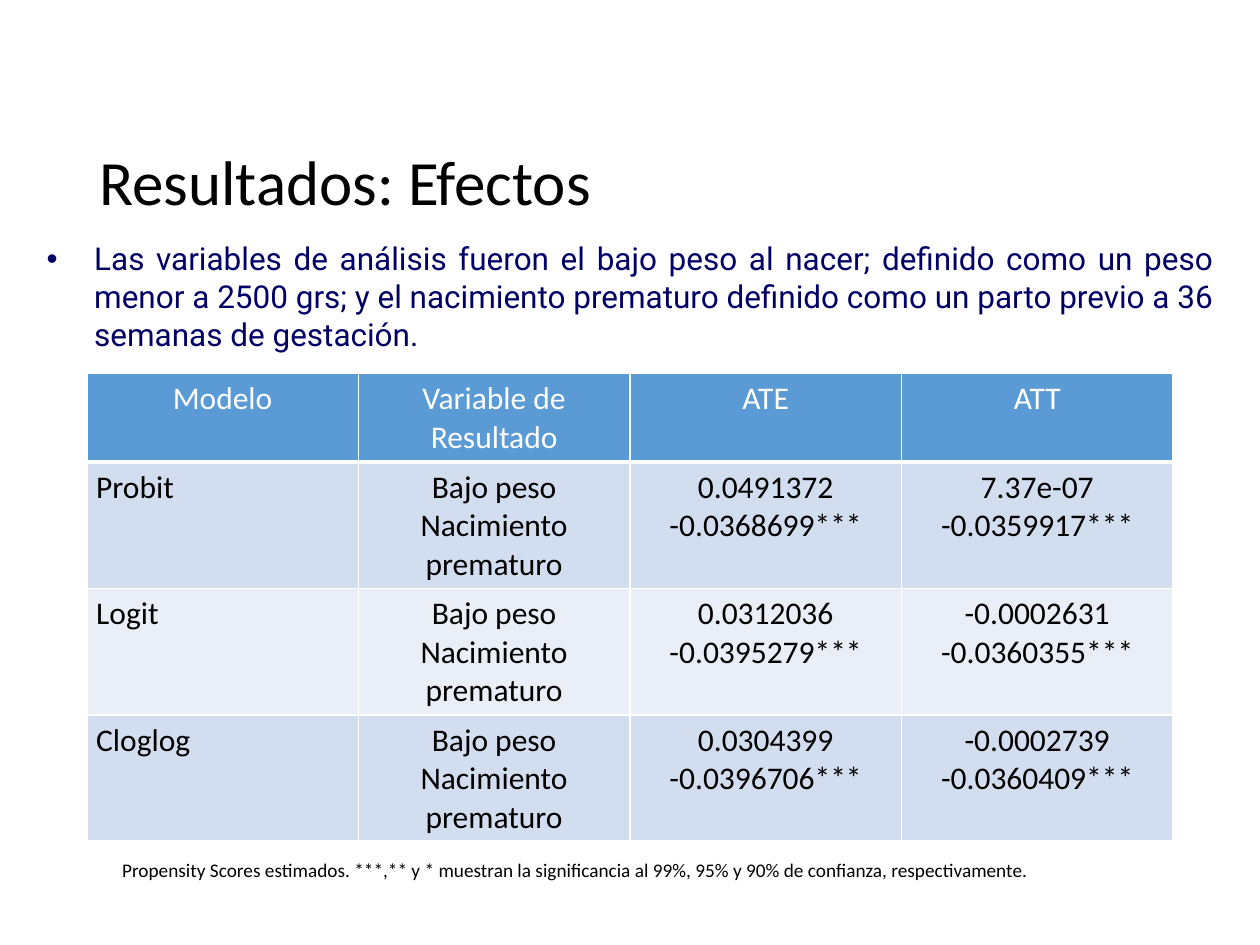
from pptx import Presentation
from pptx.dml.color import RGBColor
from pptx.enum.text import MSO_ANCHOR, PP_ALIGN
from pptx.oxml.ns import qn
from pptx.util import Cm, Pt
from lxml import etree

LEFT, CENTER, JUSTIFY = PP_ALIGN.LEFT, PP_ALIGN.CENTER, PP_ALIGN.JUSTIFY
TOP, MIDDLE = MSO_ANCHOR.TOP, MSO_ANCHOR.MIDDLE
BLACK = RGBColor(0x00, 0x00, 0x00)
WHITE = RGBColor(0xFF, 0xFF, 0xFF)
NAVY = RGBColor(0x00, 0x00, 0x66)
HEADER_BLUE = RGBColor(0x5B, 0x9B, 0xD5)
BAND_DARK = RGBColor(0xD2, 0xDE, 0xEF)
BAND_LIGHT = RGBColor(0xEA, 0xEF, 0xF7)

OUTCOMES = ["Bajo peso", "Nacimiento prematuro"]
HEADINGS = ["Modelo", "Variable de Resultado", "ATE", "ATT"]
EFFECTS = [
    ("Probit", ["0.0491372", "-0.0368699***"], ["7.37e-07", "-0.0359917***"]),
    ("Logit", ["0.0312036", "-0.0395279***"], ["-0.0002631", "-0.0360355***"]),
    ("Cloglog", ["0.0304399", "-0.0396706***"], ["-0.0002739", "-0.0360409***"]),
]


def add_span(para, text, size, color, font="Calibri"):
    span = para.add_run()
    span.text = text
    span.font.name = font
    span.font.size = Pt(size)
    span.font.bold = False
    span.font.color.rgb = color


def add_text(page, place, text, size, color, align, font="Calibri", anchor=TOP):
    box = page.shapes.add_textbox(*[Cm(length) for length in place])
    frame = box.text_frame
    frame.word_wrap = True
    frame.vertical_anchor = anchor
    para = frame.paragraphs[0]
    para.alignment = align
    add_span(para, text, size, color, font)
    return para


def add_bullet(para, indent):
    properties = para._p.get_or_add_pPr()
    properties.set("marL", str(indent))
    properties.set("indent", str(-indent))
    etree.SubElement(properties, qn("a:buFont"), typeface="Arial")
    etree.SubElement(properties, qn("a:buChar"), char="•")


def add_borders(cell, bottom_width):
    properties = cell._tc.get_or_add_tcPr()
    for side, width in (("L", 1), ("R", 1), ("T", 1), ("B", bottom_width)):
        line = etree.SubElement(properties, qn("a:ln" + side), w=str(Pt(width)))
        fill = etree.SubElement(line, qn("a:solidFill"))
        etree.SubElement(fill, qn("a:srgbClr"), val=str(WHITE))


def fill_cell(cell, lines, color, background, align, bottom_width):
    cell.margin_left = cell.margin_right = Cm(0.19)
    cell.margin_top = cell.margin_bottom = Cm(0.13)
    add_borders(cell, bottom_width)
    cell.fill.solid()
    cell.fill.fore_color.rgb = background
    frame = cell.text_frame
    for index, line in enumerate(lines):
        para = frame.add_paragraph() if index else frame.paragraphs[0]
        para.alignment = align
        add_span(para, line, 18, color)


def add_effects_table(page):
    rows = [[[heading] for heading in HEADINGS]]
    rows += [[[model], OUTCOMES, ate, att] for model, ate, att in EFFECTS]
    table = page.shapes.add_table(
        len(rows), len(HEADINGS), Cm(1.75), Cm(7.53), Cm(21.9), Cm(9.39)
    ).table
    for row_index, row in enumerate(rows):
        header = row_index == 0
        table.rows[row_index].height = Cm(1.77 if header else 2.54)
        band = BAND_DARK if row_index % 2 else BAND_LIGHT
        for column_index, lines in enumerate(row):
            fill_cell(
                table.cell(row_index, column_index),
                lines,
                WHITE if header else BLACK,
                HEADER_BLUE if header else band,
                CENTER if header or column_index else LEFT,
                3 if header else 1,
            )


def main():
    deck = Presentation()
    deck.slide_width, deck.slide_height = Cm(25.4), Cm(19.05)
    page = deck.slides.add_slide(deck.slide_layouts[6])
    title = add_text(page, (1.75, 2.77, 21.9, 1.93), "Resultados: Efectos",
                     36, BLACK, LEFT, anchor=MIDDLE)
    title.line_spacing = 0.9
    summary = add_text(
        page, (0.69, 4.7, 24.03, 2.57),
        "Las variables de análisis fueron el bajo peso al nacer; definido como un "
        "peso menor a 2500 grs; y el nacimiento prematuro definido como un parto "
        "previo a 36 semanas de gestación.",
        18, NAVY, JUSTIFY, font="Roboto")
    add_bullet(summary, Cm(0.96))
    add_effects_table(page)
    add_text(
        page, (0.69, 17.17, 21.82, 0.73),
        "Propensity Scores estimados. ***,** y * muestran la significancia al 99%, "
        "95% y 90% de confianza, respectivamente.",
        11, BLACK, CENTER)
    deck.save("out.pptx")


if __name__ == "__main__":
    main()
